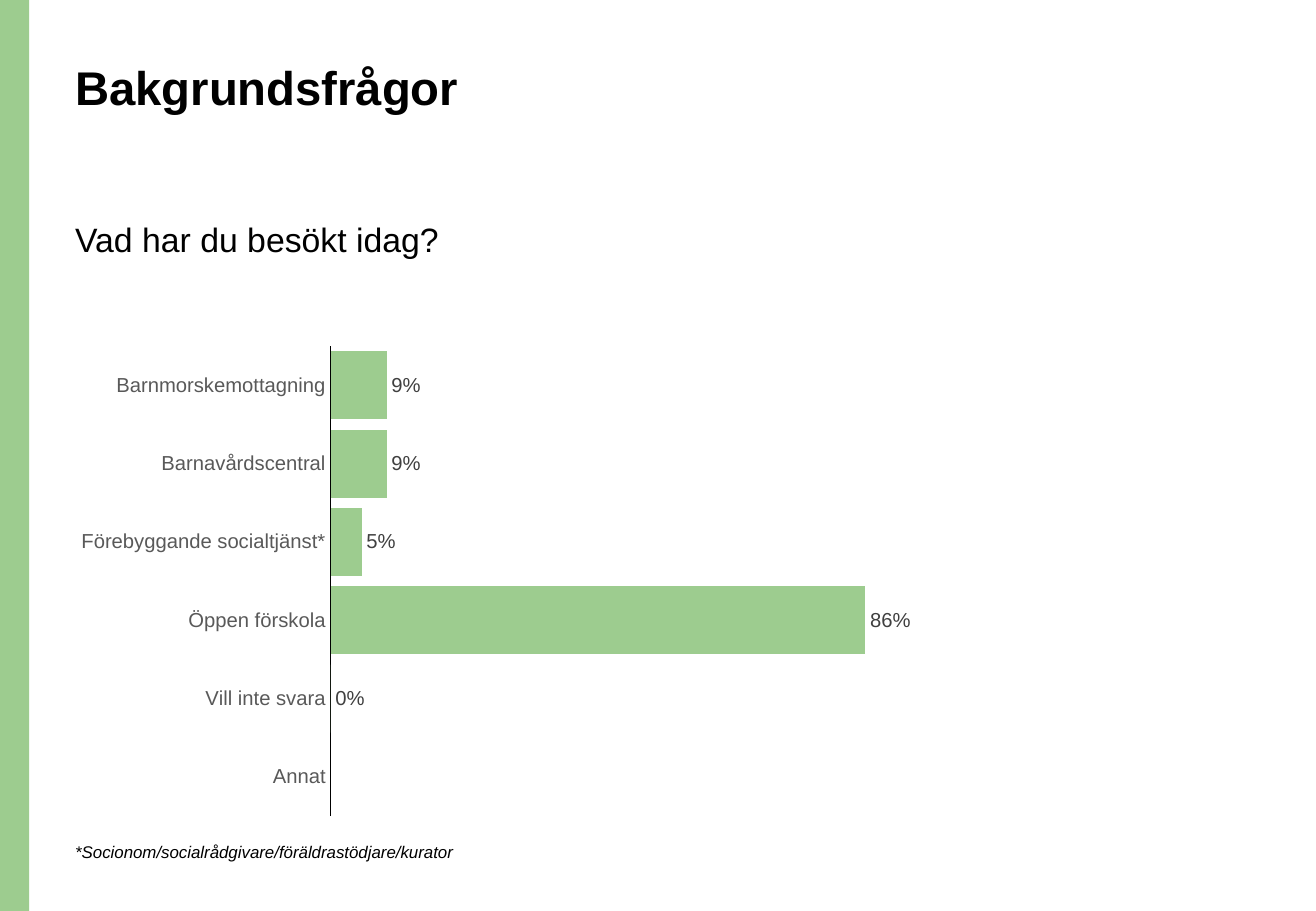
from lxml.etree import SubElement
from pptx import Presentation
from pptx.chart.data import CategoryChartData
from pptx.dml.color import RGBColor
from pptx.enum.chart import XL_CHART_TYPE, XL_LABEL_POSITION, XL_TICK_MARK
from pptx.enum.shapes import MSO_SHAPE
from pptx.enum.text import MSO_ANCHOR, PP_ALIGN
from pptx.oxml.ns import qn
from pptx.util import Inches, Pt

COLORS = {"green": "9DCC8F", "black": "000000", "category": "595959", "label": "404040"}
LEFT = Inches(0.52)


def style_font(font, size, color, bold=False, italic=False):
    font.name = "Arial"
    font.size = Pt(size)
    font.bold = bold
    font.italic = italic
    font.color.rgb = RGBColor.from_string(COLORS[color])


def write_text(s, text, size, spacing=1.0, bold=False, italic=False):
    tf = s.text_frame
    tf.word_wrap = True
    tf.vertical_anchor = MSO_ANCHOR.TOP
    tf.text = text
    p = tf.paragraphs[0]
    p.alignment = PP_ALIGN.LEFT
    p.line_spacing = spacing
    style_font(p.runs[0].font, size, "black", bold, italic)


prs = Presentation()
prs.slide_width = Inches(10.83)
prs.slide_height = Inches(7.5)
slide = prs.slides.add_slide(prs.slide_layouts[5])

# Green band at the left edge
band = slide.shapes.add_shape(MSO_SHAPE.RECTANGLE, 0, 0, Inches(0.24), prs.slide_height)
band.shadow.inherit = False
band.fill.solid()
band.fill.fore_color.rgb = RGBColor.from_string(COLORS["green"])
band.line.fill.background()

# Title, question and footnote
title = slide.shapes.title
title.left, title.top, title.width, title.height = LEFT, Inches(0.48), Inches(9.34), Inches(1.02)
write_text(title, "Bakgrundsfrågor", 28, spacing=0.9, bold=True)

question = slide.shapes.add_textbox(LEFT, Inches(1.79), Inches(6.5), Inches(0.74))
write_text(question, "Vad har du besökt idag?", 20, spacing=0.9)

footnote = slide.shapes.add_textbox(LEFT, Inches(6.88), Inches(5.42), Inches(0.27))
write_text(footnote, "*Socionom/socialrådgivare/föräldrastödjare/kurator", 10, italic=True)

# Bar chart of visits
visits = {
    "Barnmorskemottagning": 0.09,
    "Barnavårdscentral": 0.09,
    "Förebyggande socialtjänst*": 0.05,
    "Öppen förskola": 0.86,
    "Vill inte svara": 0,
    "Annat": None,
}
data = CategoryChartData(number_format="0%")
data.categories = list(visits)
data.add_series("Series 1", list(visits.values()))
chart = slide.shapes.add_chart(
    XL_CHART_TYPE.BAR_CLUSTERED, LEFT, Inches(2.77), Inches(7.46), Inches(4.03), data
).chart
chart.has_title = False
chart.has_legend = False
style_font(chart.font, 10, "black")

# Axes
cat_axis = chart.category_axis
cat_axis.reverse_order = True
cat_axis.major_tick_mark = XL_TICK_MARK.NONE
cat_axis.has_major_gridlines = False
cat_axis.format.line.width = Pt(0.75)
cat_axis.format.line.color.rgb = RGBColor.from_string(COLORS["black"])
style_font(cat_axis.tick_labels.font, 12, "category")

val_axis = chart.value_axis
val_axis.minimum_scale = 0
val_axis.maximum_scale = 1
val_axis.has_major_gridlines = False
val_axis.visible = False

# Bars and their labels
plot = chart.plots[0]
plot.gap_width = 15
plot.vary_by_categories = False
bars = plot.series[0]
bars.format.fill.solid()
bars.format.fill.fore_color.rgb = RGBColor.from_string(COLORS["green"])
labels = bars.data_labels
labels.show_value = True
labels.position = XL_LABEL_POSITION.OUTSIDE_END
labels.number_format = "0%"
labels.number_format_is_linked = False
style_font(labels.font, 12, "label")

# Fixed plot area, as fractions of the chart
plot_area = chart.plots[0]._element.getparent()
layout = plot_area.find(qn("c:layout"))
if layout is None:
    layout = plot_area.makeelement(qn("c:layout"))
    plot_area.insert(0, layout)
manual = SubElement(layout, qn("c:manualLayout"))
settings = {"layoutTarget": "inner", "xMode": "edge", "yMode": "edge",
            "x": 0.295, "y": 0.02, "w": 0.686, "h": 0.96}
for tag, value in settings.items():
    SubElement(manual, qn(f"c:{tag}")).set("val", str(value))

prs.save("out.pptx")
